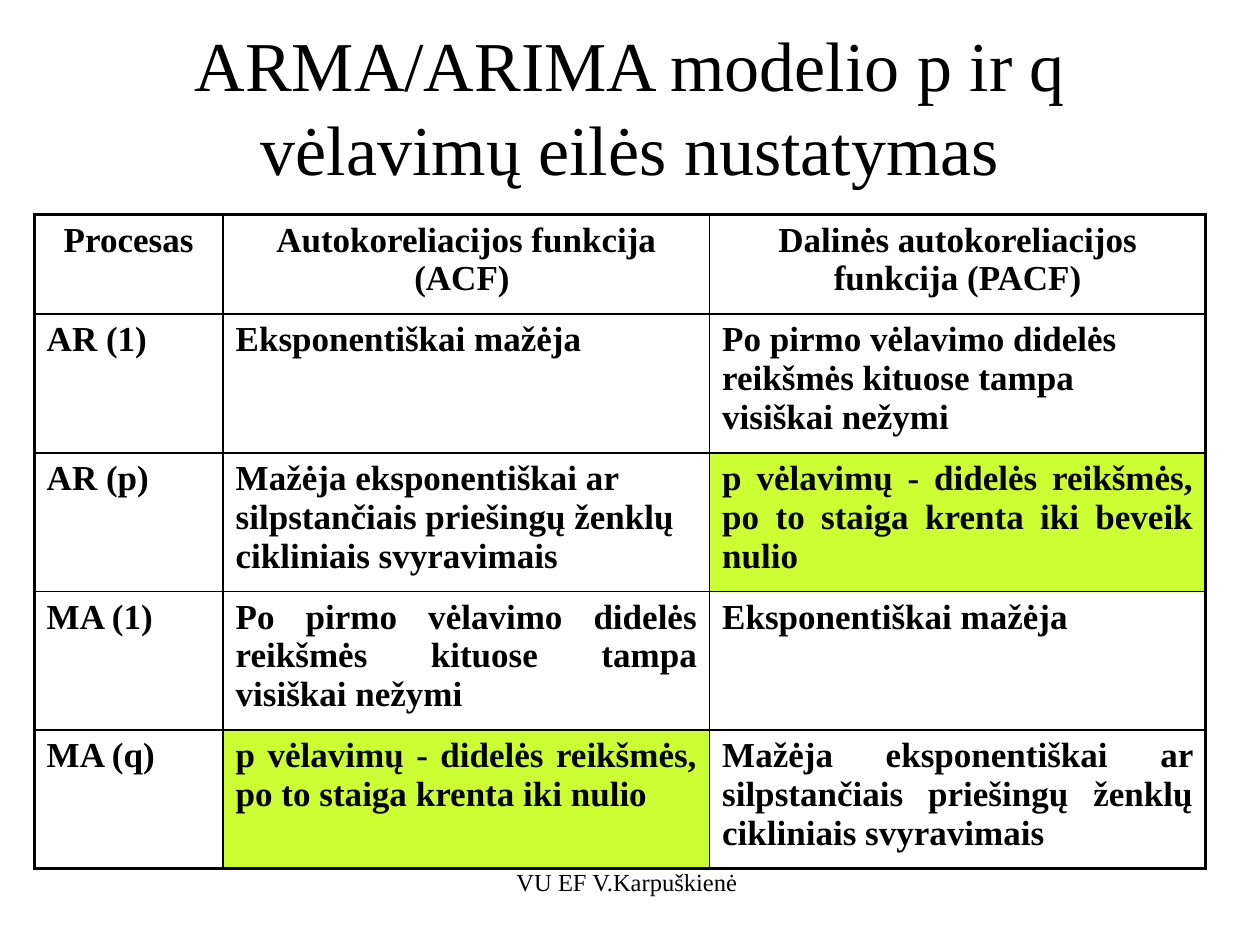
from lxml import etree
from pptx import Presentation
from pptx import util as u
from pptx.dml.color import RGBColor
from pptx.enum import text
from pptx.oxml import ns

BLACK = RGBColor(0x00, 0x00, 0x00)
LIME = RGBColor(0xCC, 0xFF, 0x33)
LEFT = text.PP_ALIGN.LEFT
CENTER = text.PP_ALIGN.CENTER
JUSTIFY = text.PP_ALIGN.JUSTIFY

COLUMN_WIDTHS = [108, 278, 283.5]
ROW_HEIGHTS = [57, 79.2, 79.2, 79.2, 79.2]
FADING = "Eksponentiškai mažėja"
CUTOFF = "Po pirmo vėlavimo didelės reikšmės kituose tampa visiškai nežymi"
WAVES = "Mažėja eksponentiškai ar silpstančiais priešingų ženklų cikliniais svyravimais"
LAGS = "p vėlavimų - didelės reikšmės, po to staiga krenta iki "

ROWS = [
    ["Procesas", "Autokoreliacijos funkcija (ACF) ", "Dalinės autokoreliacijos funkcija (PACF)"],
    ["AR (1)", FADING, CUTOFF],
    ["AR (p)", WAVES, LAGS + "beveik nulio"],
    ["MA (1) ", CUTOFF, FADING],
    ["MA (q)", LAGS + "nulio", WAVES],
]
LEFT_ALIGNED = {(1, 2), (2, 1)}
HIGHLIGHTED = {(2, 2), (4, 1)}


class SlideBuilder:
    font = "Times New Roman"
    inner_line, outer_line = 1, 2

    def __init__(self, page):
        self.page = page

    def add_words(self, frame, words, size, align, bold=False):
        para = frame.paragraphs[0]
        para.alignment = align
        span = para.add_run()
        span.text = words
        span.font.name = self.font
        span.font.size = u.Pt(size)
        span.font.bold = bold
        span.font.color.rgb = BLACK
        return para

    def text_box(self, area, words, size, anchor=text.MSO_ANCHOR.TOP, pitch=None):
        box = self.page.shapes.add_textbox(*map(u.Pt, area))
        box.text_frame.word_wrap = True
        box.text_frame.vertical_anchor = anchor
        para = self.add_words(box.text_frame, words, size, CENTER)
        if pitch:
            para.line_spacing = u.Pt(pitch)

    def border(self, cell, side, width):
        line = etree.SubElement(cell._tc.get_or_add_tcPr(), ns.qn("a:ln" + side), w=str(u.Pt(width)))
        fill = etree.SubElement(line, ns.qn("a:solidFill"))
        etree.SubElement(fill, ns.qn("a:srgbClr"), val=str(BLACK))

    def table(self, left, top, widths, heights, rows):
        frame = self.page.shapes.add_table(
            len(rows), len(widths), u.Pt(left), u.Pt(top), u.Pt(sum(widths)), u.Pt(sum(heights)))
        grid = frame.table
        grid.first_row = grid.horz_banding = False
        for column, width in zip(grid.columns, widths):
            column.width = u.Pt(width)
        for row, height in zip(grid.rows, heights):
            row.height = u.Pt(height)
        for r, row in enumerate(rows):
            for c, words in enumerate(row):
                cell = grid.cell(r, c)
                align = CENTER if r == 0 else LEFT if (r, c) in LEFT_ALIGNED else JUSTIFY
                self.add_words(cell.text_frame, words, 20, align, bold=True)
                # The table's outline is heavier than its inner grid
                outer = {"L": c == 0, "R": c == len(widths) - 1,
                         "T": r == 0, "B": r == len(rows) - 1}
                for side, is_outer in outer.items():
                    self.border(cell, side, self.outer_line if is_outer else self.inner_line)
                if (r, c) in HIGHLIGHTED:
                    cell.fill.solid()
                    cell.fill.fore_color.rgb = LIME
                else:
                    cell.fill.background()


def main():
    deck = Presentation()
    deck.slide_width, deck.slide_height = u.Pt(720), u.Pt(540)
    builder = SlideBuilder(deck.slides.add_slide(deck.slide_layouts[6]))

    # Footer
    builder.text_box((246, 492, 228, 36), "VU EF V.Karpuškienė ", 14)
    # Title
    builder.text_box((54, 15, 612, 90), "ARMA/ARIMA modelio p ir q vėlavimų eilės nustatymas",
                     40, text.MSO_ANCHOR.MIDDLE, pitch=48)
    # Process table
    builder.table(19.5, 122.5, COLUMN_WIDTHS, ROW_HEIGHTS, ROWS)

    deck.save("out.pptx")


if __name__ == "__main__":
    main()
